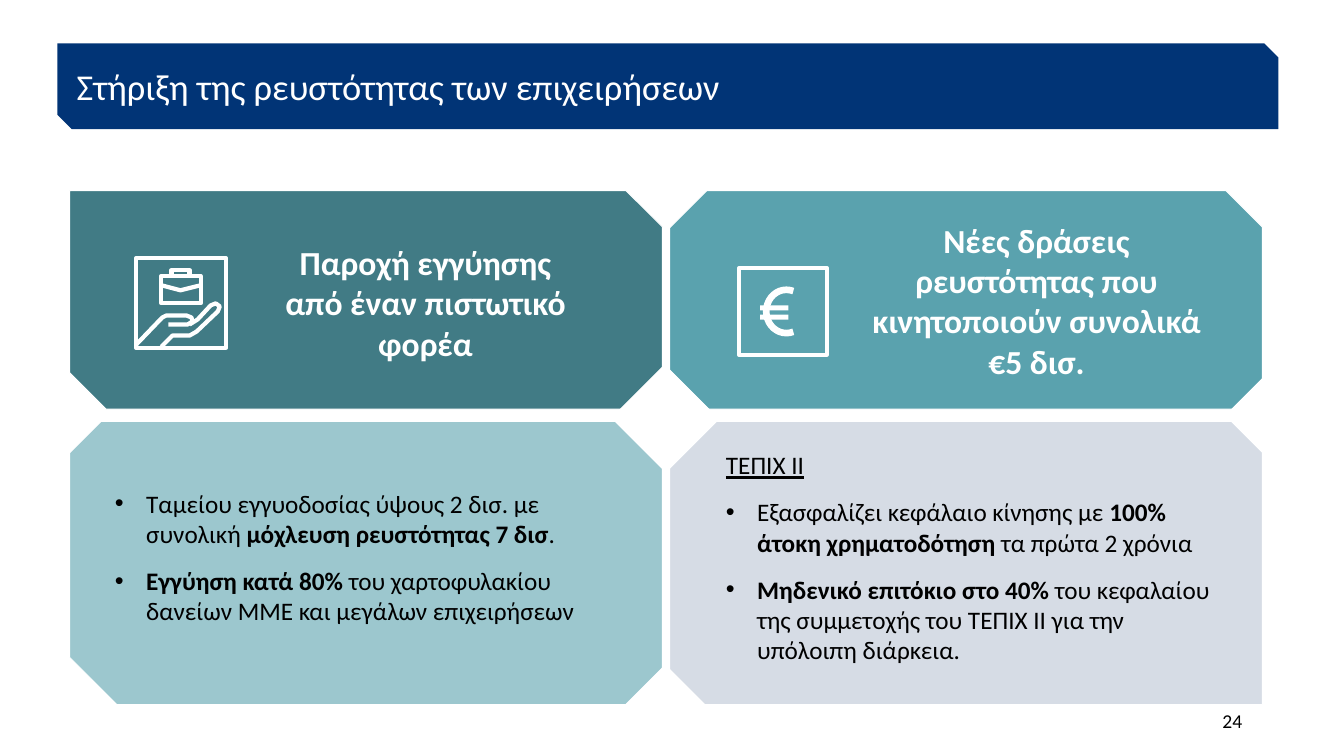
from math import cos, radians, sin

from lxml.etree import SubElement
from pptx import Presentation
from pptx.dml.color import RGBColor
from pptx.enum.shapes import MSO_SHAPE as SHAPE
from pptx.enum.text import MSO_ANCHOR as ANCHOR, MSO_AUTO_SIZE as AUTO, PP_ALIGN as ALIGN
from pptx.oxml.ns import qn
from pptx.util import Inches, Pt

FONT = "Calibri"
WHITE, BLACK, NAVY = "FFFFFF", "000000", "013476"
COLS, ROWS = (0.69, 6.64), (1.89, 4.18)
CARD_W, ROW_H = 5.88, (2.17, 2.81)
LIST_W, STROKE = 5.05, 3


def rgb(value):
    return RGBColor.from_string(value)


def place(shape, x, y, w, h):
    shape.left, shape.top, shape.width, shape.height = map(Inches, (x, y, w, h))
    return shape


def style(shape, fill=None, line=None, width=0.75):
    shape.shadow.inherit = False
    if fill:
        shape.fill.solid()
        shape.fill.fore_color.rgb = rgb(fill)
    else:
        shape.fill.background()
    if line:
        shape.line.color.rgb = rgb(line)
        shape.line.width = Pt(width)
    else:
        shape.line.fill.background()
    return shape


def add_box(s, kind, box, **look):
    return style(s.shapes.add_shape(kind, *map(Inches, box)), **look)


def add_stroke(s, points, width=STROKE):
    """Draw an open white polyline through points given in inches."""
    start, *rest = [(Inches(x), Inches(y)) for x, y in points]
    builder = s.shapes.build_freeform(*start)
    builder.add_line_segments(rest, close=False)
    return style(builder.convert_to_shape(), line=WHITE, width=width)


def set_bullet(p, bullet):
    pPr = p._p.get_or_add_pPr()
    indent = Inches(0.31) if bullet else 0
    pPr.set("marL", str(indent))
    pPr.set("indent", str(-indent))
    if bullet:
        SubElement(pPr, qn("a:buFont"), typeface="Arial")
        SubElement(pPr, qn("a:buChar"), char="•")
    else:
        SubElement(pPr, qn("a:buNone"))


def write(shape, *paragraphs, size=18, color=BLACK, bold=False, align=ALIGN.LEFT,
          anchor=ANCHOR.TOP, gap=0, inset=0.1, heading=None):
    """Fill a shape with text; ** toggles bold, heading adds an underlined first line."""
    tf = shape.text_frame
    tf.word_wrap, tf.auto_size, tf.vertical_anchor = True, AUTO.NONE, anchor
    tf.margin_left = tf.margin_right = Inches(inset)
    tf.margin_top = tf.margin_bottom = Inches(0.05)
    lines = ([heading] if heading else []) + list(paragraphs)
    for i, line in enumerate(lines):
        p = tf.paragraphs[0] if i == 0 else tf.add_paragraph()
        p.alignment, p.line_spacing = align, 1.0
        p.space_before, p.space_after = Pt(gap if i else 0), Pt(gap)
        set_bullet(p, gap > 0 and line != heading)
        for j, part in enumerate(line.split("**")):
            if part:
                r = p.add_run()
                r.text = part
                r.font.name, r.font.size = FONT, Pt(size)
                r.font.color.rgb = rgb(color)
                r.font.bold = bold or j % 2 == 1
                r.font.underline = line == heading


def add_text(s, box, *paragraphs, **fmt):
    write(s.shapes.add_textbox(*map(Inches, box)), *paragraphs, **fmt)


def add_cards(s):
    colors = (("417B85", "5AA2AE"), ("9CC7CE", "D6DCE5"))
    for y, h, row in zip(ROWS, ROW_H, colors):
        for x, color in zip(COLS, row):
            card = add_box(s, SHAPE.SNIP_2_DIAG_RECTANGLE, (x, y, CARD_W, h),
                           fill=color, line=WHITE)
    card.adjustments[1] = 0.109
    # White diamonds trim the corners where the cards meet
    corners = ((6.61, 4.14, 0.76, 0.71), (6.63, 7.02, 0.64, 0.55), (6.6, 1.85, 0.64, 0.55),
               (0.61, 4.12, 0.64, 0.55), (12.58, 4.15, 0.64, 0.55))
    for cx, cy, w, h in corners:
        add_box(s, SHAPE.RECTANGLE, (cx - w / 2, cy - h / 2, w, h),
                fill=WHITE, line=WHITE).rotation = 45


def add_guarantee_icon(s):
    for box in ((1.35, 2.56, 0.89, 0.89), (1.6, 2.74, 0.39, 0.27)):
        add_box(s, SHAPE.RECTANGLE, box, line=WHITE, width=STROKE)
    handle = [(1.7, 2.74), (1.7, 2.68), (1.88, 2.68), (1.88, 2.74)]
    flap = [(1.6, 2.83), (1.79, 2.88), (1.99, 2.83)]
    palm = [(1.35, 3.42), (1.61, 3.15), (1.65, 3.13), (1.85, 3.13), (1.9, 3.15),
            (1.91, 3.19), (1.86, 3.22), (1.67, 3.22)]
    finger = [(1.88, 3.22), (1.96, 3.17), (2.09, 3.03), (2.14, 3.01), (2.18, 3.04),
              (2.16, 3.09), (1.95, 3.29), (1.88, 3.33), (1.71, 3.33), (1.6, 3.44)]
    for points in (handle, flap, palm, finger):
        add_stroke(s, points)


def add_euro_icon(s):
    add_box(s, SHAPE.RECTANGLE, (7.33, 2.66, 0.87, 0.86), line=WHITE, width=STROKE)
    arc = [(7.8 + 0.2 * cos(radians(a)), 3.09 + 0.215 * sin(radians(a)))
           for a in range(70, 291, 10)]
    add_stroke(s, arc, width=4.75)
    for y in (3.03, 3.12):
        add_box(s, SHAPE.RECTANGLE, (7.54, y, 0.28, 0.05), fill=WHITE)


def main():
    prs = Presentation()
    prs.slide_width, prs.slide_height = Inches(13.33), Inches(7.5)
    s = prs.slides.add_slide(prs.slide_layouts.get_by_name("Two Content"))
    title, left, right = s.placeholders

    banner = (0.57, 0.43, 12.11, 0.85)
    add_box(s, SHAPE.SNIP_2_DIAG_RECTANGLE, banner, fill=NAVY)
    add_cards(s)
    for holder in (title, left, right):
        s.shapes._spTree.append(holder._element)  # bring text above the panels

    write(place(title, *banner), "Στήριξη της ρευστότητας των επιχειρήσεων",
          size=26, color=WHITE, anchor=ANCHOR.MIDDLE, inset=0.19)
    heads = dict(size=24, color=WHITE, bold=True, align=ALIGN.CENTER)
    add_text(s, (2.48, 2.35, 3.48, 1.31), "Παροχή εγγύησης",
             "από έναν πιστωτικό φορέα", **heads)
    add_text(s, (8.37, 2.13, 3.82, 1.72),
             "Νέες δράσεις ρευστότητας που κινητοποιούν συνολικά €5 δισ.", **heads)
    add_guarantee_icon(s)
    add_euro_icon(s)

    write(place(left, 1.04, 4.79, LIST_W, 1.48),
          "Ταμείου εγγυοδοσίας ύψους 2 δισ. με συνολική **μόχλευση ρευστότητας 7 δισ**.",
          "**Εγγύηση κατά 80%** του χαρτοφυλακίου δανείων ΜΜΕ και μεγάλων επιχειρήσεων",
          gap=6)
    write(place(right, 7.1, 4.41, LIST_W, 2.26),
          "Εξασφαλίζει κεφάλαιο κίνησης με **100% άτοκη χρηματοδότηση** τα πρώτα 2 χρόνια",
          "**Μηδενικό επιτόκιο στο 40% **του κεφαλαίου της συμμετοχής του ΤΕΠΙΧ ΙΙ "
          "για την υπόλοιπη διάρκεια.",
          gap=6, heading="ΤΕΠΙΧ ΙΙ")
    add_text(s, (9.42, 6.95, 3, 0.4), "24", size=14, align=ALIGN.RIGHT, anchor=ANCHOR.MIDDLE)
    prs.save("out.pptx")


if __name__ == "__main__":
    main()
